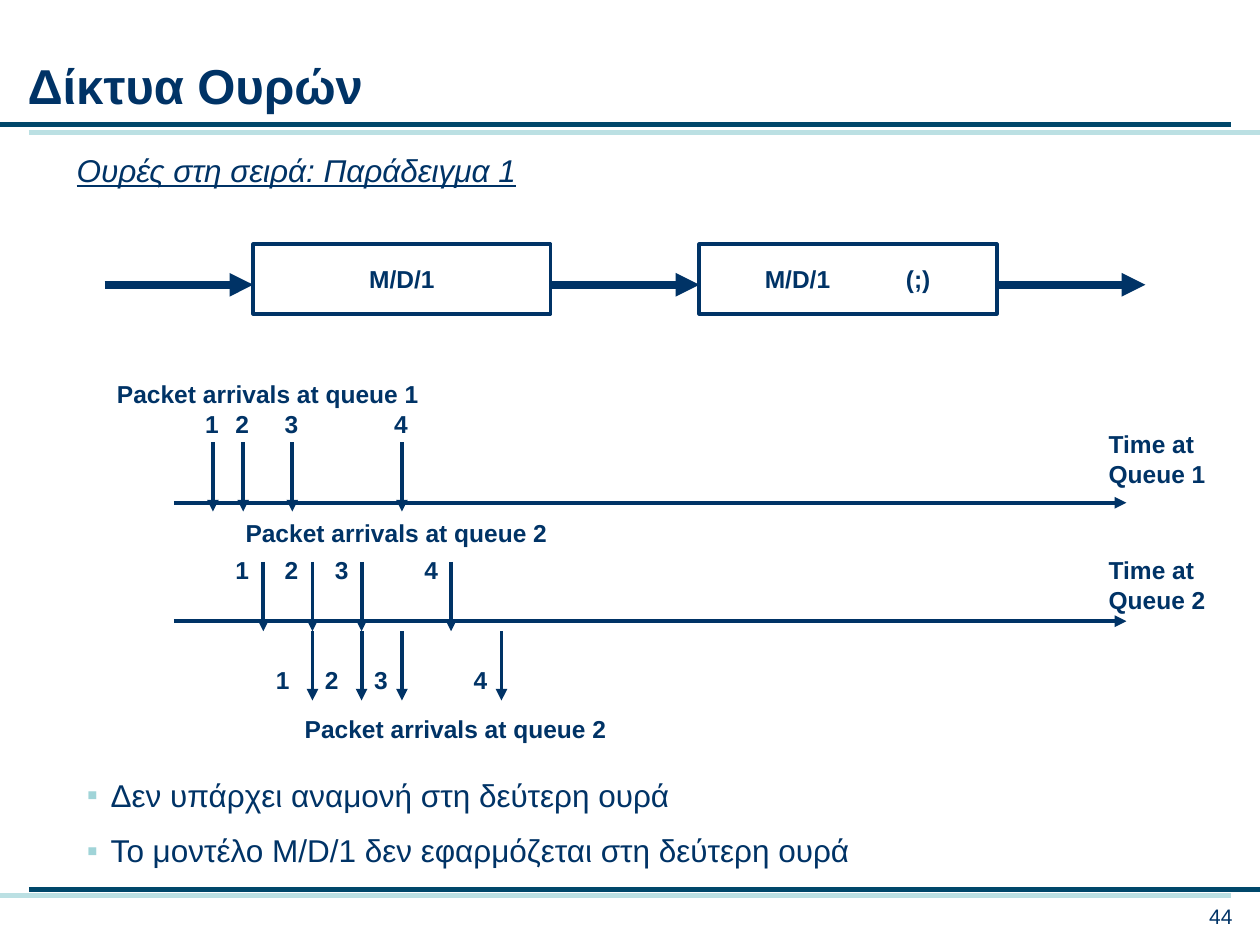
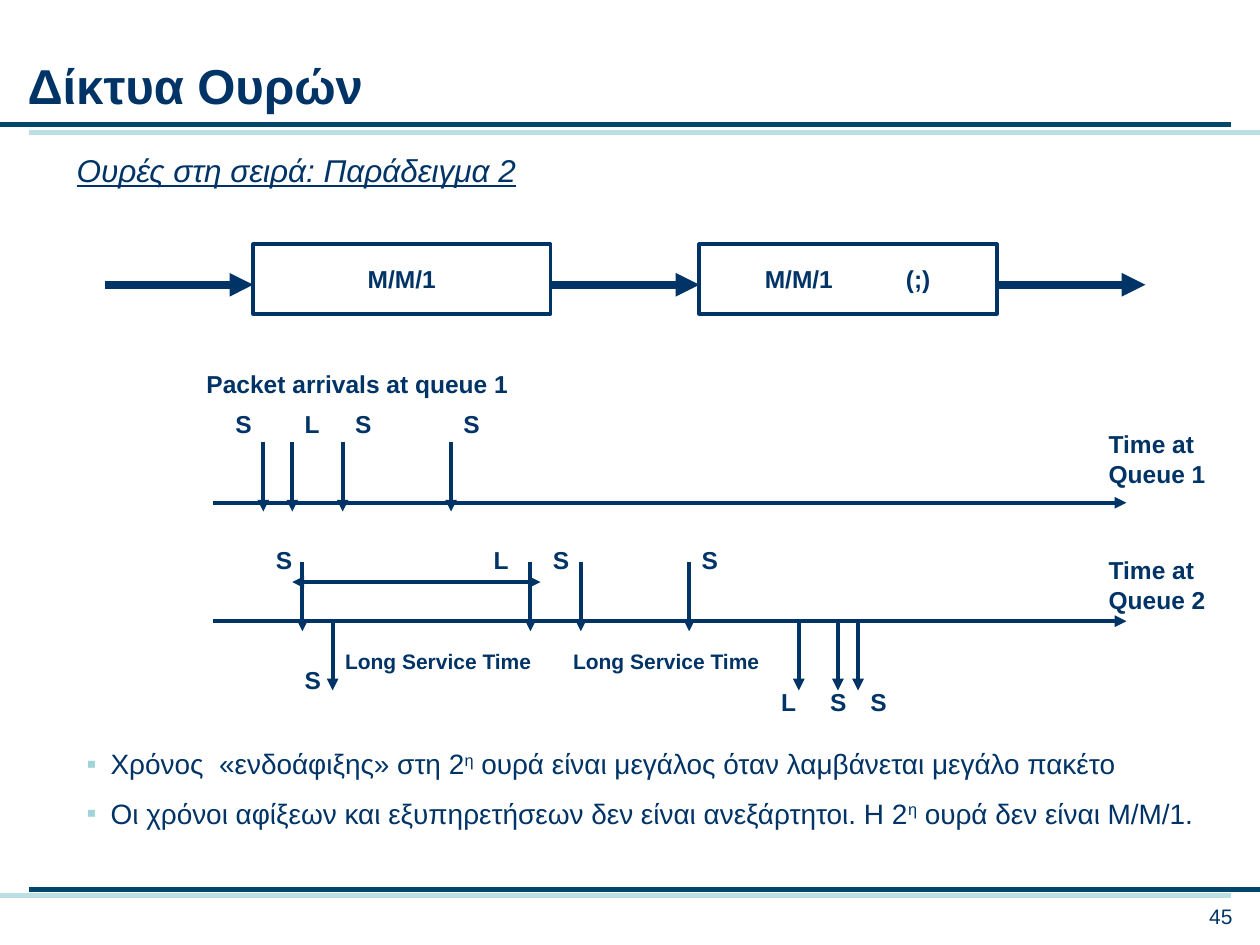
from dataclasses import dataclass

import pptx
import pptx.dml.color
import pptx.enum.shapes
import pptx.enum.text
import pptx.oxml.ns
import pptx.util
from lxml import etree

Inches = pptx.util.Inches
Pt = pptx.util.Pt
RGB = pptx.dml.color.RGBColor.from_string
ALIGN = pptx.enum.text.PP_ALIGN
ANCHOR = pptx.enum.text.MSO_ANCHOR


# Theme
@dataclass(frozen=True)
class Theme:
    font: str = "Arial"
    ink: str = "003366"
    band: str = "00476A"
    band_light: str = "BBE0E3"
    bullet: str = "A0D4D8"
    title: int = 28
    subtitle: int = 18
    label: int = 14
    small: int = 12
    band_width: float = 3
    flow_width: float = 4.5
    line_width: float = 2.25


T = Theme()


# Content types
@dataclass(frozen=True)
class Tick:
    text: str
    x: float
    label_x: float


@dataclass(frozen=True)
class TickRow:
    """Vertical arrows that share a top edge and a label height."""
    top: float
    label_y: float
    ticks: tuple[Tick, ...]


@dataclass(frozen=True)
class Caption:
    text: str
    x: float
    y: float
    size: int = T.label


@dataclass(frozen=True)
class Example:
    number: int
    page: int
    model: str
    axis_x: float
    rows: tuple[TickRow, ...]
    captions: tuple[Caption, ...]
    bullets: tuple[str, ...]
    bullet_box: tuple[float, float, float, float]
    bullet_size: int
    bullet_gap: int
    spans: tuple[tuple[float, float, float], ...] = ()


TICK_LENGTH = 0.55
AXIS_END = 8.94
AXES = ((3.99, 3.36), (4.93, 4.36))  # axis height, label top
ARRIVALS_1, ARRIVALS_2 = (f"Packet arrivals at queue {n}" for n in (1, 2))
LONG = "Long Service Time"

EXAMPLES = (
    Example(
        number=1, page=44, model="M/D/1", axis_x=1.38,
        rows=(
            TickRow(3.51, 3.2, (Tick("1", 1.69, 1.53), Tick("2", 1.93, 1.77),
                                Tick("3", 2.32, 2.16), Tick("4", 3.19, 3.03))),
            TickRow(4.46, 4.36, (Tick("1", 2.09, 1.77), Tick("2", 2.48, 2.16),
                                 Tick("3", 2.87, 2.56), Tick("4", 3.58, 3.27))),
            TickRow(5.01, 5.23, (Tick("1", 2.48, 2.09), Tick("2", 2.87, 2.48),
                                 Tick("3", 3.19, 2.87), Tick("4", 3.98, 3.66))),
        ),
        captions=(Caption(ARRIVALS_1, 0.83, 2.96),
                  Caption(ARRIVALS_2, 1.85, 4.06),
                  Caption(ARRIVALS_2, 2.32, 5.62)),
        bullets=("Δεν υπάρχει αναμονή στη δεύτερη ουρά",
                 "Το μοντέλο M/D/1 δεν εφαρμόζεται στη δεύτερη ουρά"),
        bullet_box=(0.59, 6.11, 8.71, 0.86), bullet_size=18, bullet_gap=10,
    ),
    Example(
        number=2, page=45, model="M/M/1", axis_x=1.69,
        rows=(
            TickRow(3.51, 3.2, (Tick("S", 2.09, 1.77), Tick("L", 2.32, 2.32),
                                Tick("S", 2.72, 2.72), Tick("S", 3.58, 3.58))),
            TickRow(4.46, 4.28, (Tick("S", 2.4, 2.09), Tick("L", 4.21, 3.82),
                                 Tick("S", 4.61, 4.29), Tick("S", 5.47, 5.47))),
            TickRow(4.93, 5.23, (Tick("S", 2.64, 2.32),)),
            TickRow(4.93, 5.4, (Tick("L", 6.34, 6.1), Tick("S", 6.65, 6.49),
                                Tick("S", 6.81, 6.81))),
        ),
        captions=(Caption(ARRIVALS_1, 1.54, 2.88),
                  Caption(LONG, 2.64, 5.1, T.small),
                  Caption(LONG, 4.45, 5.1, T.small)),
        # Carets enclose superscripts
        bullets=("Χρόνος  «ενδοάφιξης» στη 2^η^ ουρά είναι μεγάλος όταν "
                 "λαμβάνεται μεγάλο πακέτο",
                 "Οι χρόνοι αφίξεων και εξυπηρετήσεων δεν είναι ανεξάρτητοι. "
                 "Η 2^η^ ουρά δεν είναι M/M/1."),
        bullet_box=(0.59, 5.88, 9.14, 0.77), bullet_size=16, bullet_gap=9,
        spans=((2.32, 4.29, 4.62),),
    ),
)


# Drawing helpers
def add_xml(parent, tag: str, **attrs: str):
    return etree.SubElement(parent, pptx.oxml.ns.qn(tag), attrs)


def style(p, size: int, bold: bool = False) -> None:
    p.font.name = T.font
    p.font.size = Pt(size)
    p.font.bold = bold
    p.font.color.rgb = RGB(T.ink)


def add_text(s, text: str, box: tuple[float, float, float, float], size: int,
             bold: bool = False, align=ALIGN.LEFT):
    tf = s.shapes.add_textbox(*map(Inches, box)).text_frame
    tf.word_wrap = True
    p = tf.paragraphs[0]
    p.text = text
    p.alignment = align
    style(p, size, bold)
    return p


def add_line(s, start: tuple[float, float], end: tuple[float, float],
             color: str = T.ink, width: float = T.line_width,
             head: bool = False, tail: bool = False) -> None:
    line = s.shapes.add_connector(pptx.enum.shapes.MSO_CONNECTOR.STRAIGHT,
                                  *map(Inches, start + end))
    line.line.color.rgb = RGB(color)
    line.line.width = Pt(width)
    ln = line.line._get_or_add_ln()
    for wanted, tag in ((head, "a:headEnd"), (tail, "a:tailEnd")):
        if wanted:
            add_xml(ln, tag, type="triangle")
    add_xml(line._element.spPr, "a:effectLst")


def add_queue(s, x: float, model: str, doubtful: bool) -> None:
    sp = s.shapes.add_shape(pptx.enum.shapes.MSO_SHAPE.RECTANGLE,
                            *map(Inches, (x, 1.94, 2.36, 0.55)))
    sp.shadow.inherit = False
    sp.fill.background()
    sp.line.color.rgb = RGB(T.ink)
    sp.line.width = Pt(T.line_width)
    tf = sp.text_frame
    tf.vertical_anchor = ANCHOR.MIDDLE
    p = tf.paragraphs[0]
    p.text = model
    p.alignment = ALIGN.CENTER
    if doubtful:
        p.text = f"{model}\t(;)"
        p.alignment = ALIGN.LEFT
        tf.margin_left = Inches(0.52)
        tabs = add_xml(p._p.get_or_add_pPr(), "a:tabLst")
        add_xml(tabs, "a:tab", pos=str(Inches(1.12)), algn="l")
    style(p, T.label, bold=True)


def add_bullets(s, ex: Example) -> None:
    tf = s.shapes.add_textbox(*map(Inches, ex.bullet_box)).text_frame
    tf.word_wrap = True
    for i, text in enumerate(ex.bullets):
        p = tf.add_paragraph() if i else tf.paragraphs[0]
        for j, part in enumerate(text.split("^")):
            r = p.add_run()
            r.text = part
            if j % 2:
                r._r.get_or_add_rPr().set("baseline", "30000")
        pPr = p._p.get_or_add_pPr()
        pPr.set("marL", str(Inches(0.19)))
        pPr.set("indent", str(-Inches(0.19)))
        add_xml(add_xml(pPr, "a:buClr"), "a:srgbClr", val=T.bullet)
        add_xml(pPr, "a:buFont", typeface=T.font)
        add_xml(pPr, "a:buChar", char="▪")
        if i:
            p.space_before = Pt(ex.bullet_gap)
        style(p, ex.bullet_size)


# Slide parts
def add_frame(s, ex: Example) -> None:
    for left, right, y, color in ((0.23, 10, 1.05, T.band_light),
                                  (0, 9.77, 0.99, T.band),
                                  (0, 9.77, 7.11, T.band_light),
                                  (0.23, 10, 7.06, T.band)):
        add_line(s, (left, y), (right, y), color, T.band_width)
    add_text(s, "Δίκτυα Ουρών", (0.12, 0.39, 9.29, 0.57), T.title, bold=True)
    add_text(s, str(ex.page), (8.78, 7.12, 1.1, 0.3), T.small,
             align=ALIGN.RIGHT)
    p = add_text(s, f"Ουρές στη σειρά: Παράδειγμα {ex.number}",
                 (0.51, 1.15, 5.43, 0.4), T.subtitle)
    p.font.italic = True
    p.font.underline = True


def add_flow(s, model: str) -> None:
    for x, doubtful in ((2.01, False), (5.55, True)):
        add_queue(s, x, model, doubtful)
    for x in (0.83, 4.37, 7.91):
        add_line(s, (x, 2.26), (x + 1.18, 2.26), width=T.flow_width, tail=True)


def add_timelines(s, ex: Example) -> None:
    for n, (y, label_y) in enumerate(AXES, start=1):
        add_line(s, (ex.axis_x, y), (AXIS_END, y), tail=True)
        add_text(s, f"Time at Queue {n}", (8.7, label_y, 1.02, 0.57),
                 T.label, bold=True)
    for row in ex.rows:
        for tick in row.ticks:
            add_line(s, (tick.x, row.top), (tick.x, row.top + TICK_LENGTH),
                     tail=True)
            add_text(s, tick.text, (tick.label_x, row.label_y, 0.32, 0.33),
                     T.label, bold=True)
    for left, right, y in ex.spans:
        add_line(s, (left, y), (right, y), head=True, tail=True)
    for c in ex.captions:
        add_text(s, c.text, (c.x, c.y, 4.25, 0.33), c.size, bold=True)


def main() -> None:
    prs = pptx.Presentation()
    prs.slide_width, prs.slide_height = Inches(10), Inches(7.5)
    for ex in EXAMPLES:
        s = prs.slides.add_slide(prs.slide_layouts[6])
        add_frame(s, ex)
        add_flow(s, ex.model)
        add_timelines(s, ex)
        add_bullets(s, ex)
    prs.save("out.pptx")


if __name__ == "__main__":
    main()
